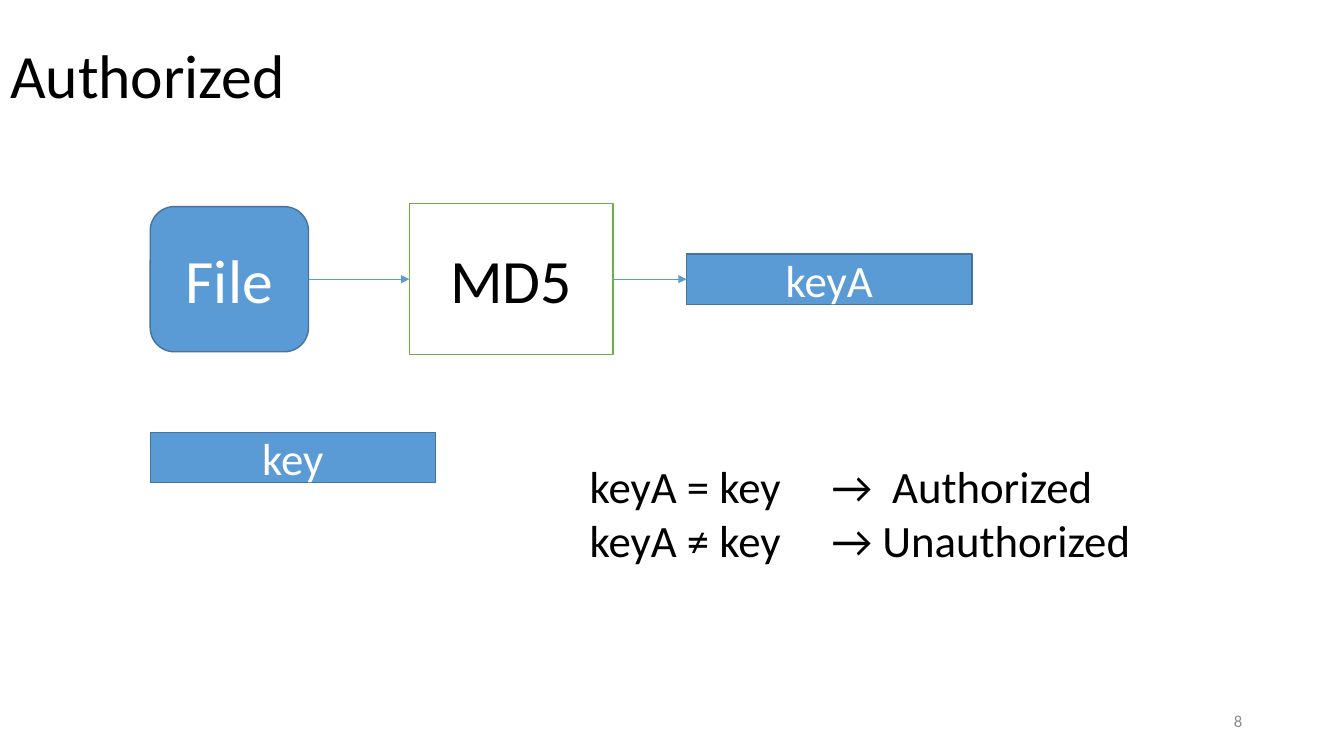
from dataclasses import dataclass

from lxml.etree import SubElement
from pptx import Presentation
from pptx.dml.color import RGBColor
from pptx.enum.shapes import MSO_CONNECTOR, MSO_SHAPE
from pptx.enum.text import MSO_ANCHOR, PP_ALIGN
from pptx.oxml.ns import qn
from pptx.util import Inches, Pt


@dataclass(frozen=True)
class Theme:
    """Colours, font and type sizes of the slide."""
    font: str = "Calibri"
    black: str = "000000"
    white: str = "FFFFFF"
    grey: str = "8C8C8C"
    blue: str = "5B9BD5"
    dark_blue: str = "43739E"
    green: str = "70AD47"
    large: int = 44
    medium: int = 32
    small: int = 12


@dataclass(frozen=True)
class Box:
    """A rectangle on the slide, in inches."""
    left: float
    top: float
    width: float
    height: float

    def lengths(self):
        """Return left, top, width and height as lengths."""
        return [Inches(n) for n in (self.left, self.top, self.width, self.height)]

    def inner(self, dx, dy, width, height):
        """Return a box offset from this one's corner."""
        return Box(self.left + dx, self.top + dy, width, height)


THEME = Theme()


def style_text(frame, size, color, align):
    """Format every run and align every paragraph of a text frame."""
    for paragraph in frame.paragraphs:
        paragraph.alignment = align
        for run in paragraph.runs:
            run.font.name = THEME.font
            run.font.size = Pt(size)
            run.font.color.rgb = RGBColor.from_string(color)


def add_block(slide, box, label, size, kind=MSO_SHAPE.RECTANGLE,
              fill=THEME.blue, outline=THEME.dark_blue, color=THEME.white):
    """Add one labelled block of the diagram."""
    block = slide.shapes.add_shape(kind, *box.lengths())
    block.shadow.inherit = False
    block.fill.solid()
    block.fill.fore_color.rgb = RGBColor.from_string(fill)
    block.line.color.rgb = RGBColor.from_string(outline)
    block.line.width = Pt(1)
    block.text_frame.text = label
    block.text_frame.vertical_anchor = MSO_ANCHOR.MIDDLE
    style_text(block.text_frame, size, color, PP_ALIGN.CENTER)
    return block


def add_arrow(slide, source, target):
    """Join the right side of one block to the left side of the next."""
    arrow = slide.shapes.add_connector(MSO_CONNECTOR.STRAIGHT, 0, 0, 0, 0)
    arrow.begin_connect(source, 3)
    arrow.end_connect(target, 1)
    arrow.line.color.rgb = RGBColor.from_string(THEME.blue)
    arrow.line.width = Pt(0.5)
    properties = arrow._element.spPr
    SubElement(properties.find(qn("a:ln")), qn("a:tailEnd"), type="triangle")
    SubElement(properties, qn("a:effectLst"))


def add_title(slide, box, heading):
    """Place the heading in the title placeholder."""
    title = slide.shapes.title
    title.left, title.top, title.width, title.height = box.lengths()
    title.text_frame.text = heading
    title.text_frame.vertical_anchor = MSO_ANCHOR.MIDDLE
    title.text_frame.paragraphs[0].line_spacing = 0.9
    style_text(title.text_frame, THEME.large, THEME.black, PP_ALIGN.LEFT)


def add_hash_flow(slide, box):
    """Draw the file, its MD5 hash and the two keys."""
    file = add_block(slide, box.inner(0, 0.03, 1.57, 1.44), "File", THEME.large,
                     kind=MSO_SHAPE.ROUNDED_RECTANGLE)
    md5 = add_block(slide, box.inner(2.57, 0, 2.02, 1.5), "MD5", THEME.large,
                    fill=THEME.white, outline=THEME.green, color=THEME.black)
    computed_key = add_block(slide, box.inner(5.32, 0.5, 2.83, 0.5), "keyA", THEME.medium)
    add_block(slide, box.inner(0, 2.27, 2.83, 0.5), "key", THEME.medium)
    add_arrow(slide, file, md5)
    add_arrow(slide, md5, computed_key)


def add_verdicts(slide, box):
    """List the outcome of each key comparison, aligned on tab stops."""
    verdicts = slide.shapes.add_textbox(*box.lengths()).text_frame
    verdicts.word_wrap = True
    verdicts.text = "keyA = key\t→\tAuthorized\nkeyA ≠ key\t→ Unauthorized"
    style_text(verdicts, THEME.medium, THEME.black, PP_ALIGN.LEFT)
    for paragraph in verdicts.paragraphs:
        stops = SubElement(paragraph._p.get_or_add_pPr(), qn("a:tabLst"))
        for position in (2.4, 3):
            SubElement(stops, qn("a:tab"), pos=str(Inches(position)), algn="l")


def add_page_number(slide, box, number):
    """Put the page number at the right of its box."""
    page = slide.shapes.add_textbox(*box.lengths()).text_frame
    page.word_wrap = True
    page.vertical_anchor = MSO_ANCHOR.MIDDLE
    page.text = number
    style_text(page, THEME.small, THEME.grey, PP_ALIGN.RIGHT)


def main():
    """Build the slide and save it."""
    deck = Presentation()
    deck.slide_width, deck.slide_height = Inches(13.33), Inches(7.5)
    slide = deck.slides.add_slide(deck.slide_layouts[5])
    add_title(slide, Box(0, 0.05, 11.5, 1.45), "Authorized")
    add_page_number(slide, Box(9.42, 6.95, 3, 0.4), "8")
    add_hash_flow(slide, Box(1.49, 2.02, 8.15, 2.77))
    add_verdicts(slide, Box(5.75, 4.5, 6, 1.18))
    deck.save("out.pptx")


if __name__ == "__main__":
    main()
